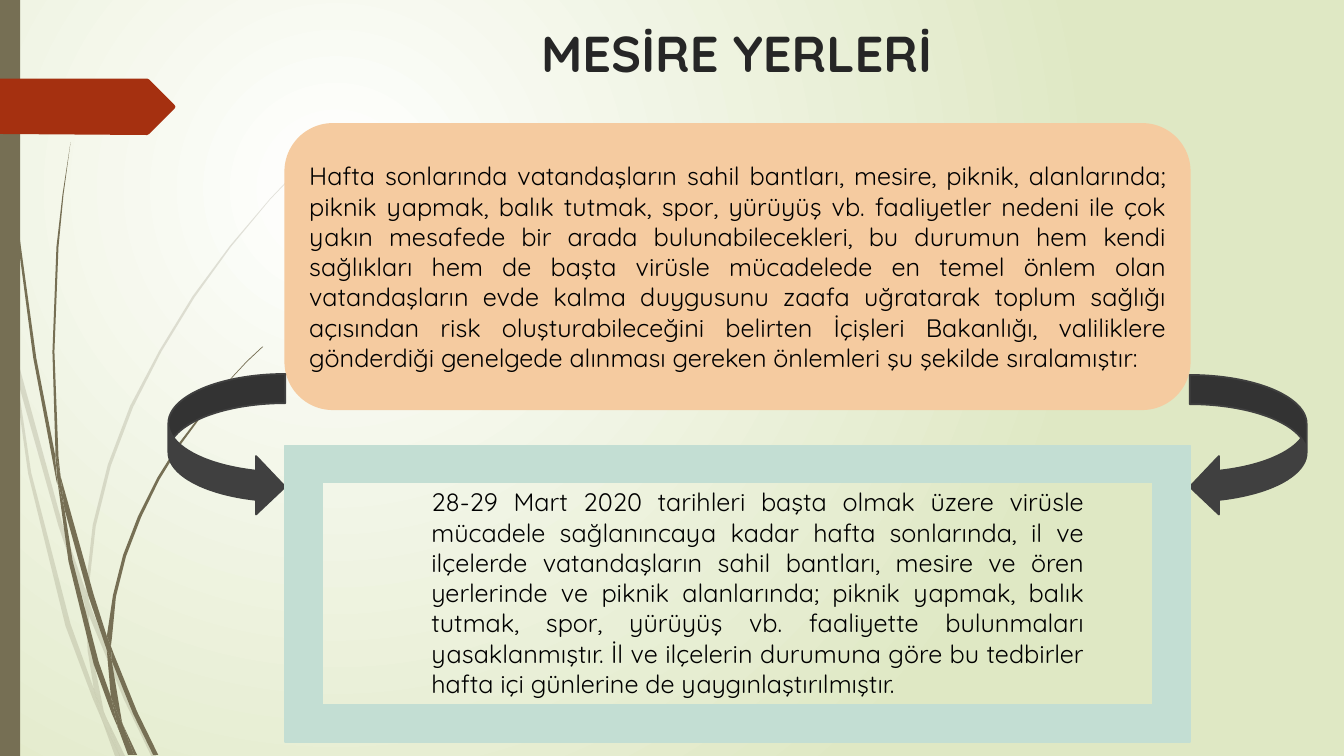
from lxml.etree import SubElement
from pptx import Presentation
from pptx.dml.color import RGBColor
from pptx.enum.shapes import MSO_SHAPE
from pptx.enum.text import MSO_ANCHOR, MSO_AUTO_SIZE, PP_ALIGN
from pptx.oxml.ns import qn
from pptx.util import Inches, Pt

COLORS = {
    "title": "262626", "text": "000000", "stem": "766F54", "badge": "A53010",
    "peach": "F5CBA0", "mint": "C3DED3", "arrow": "404040",
    "center": "FFFFFF", "edge": "DFE8C4",
}
FONT = "Quicksand"

# Outlines of the grass blades, as points in inches
PALE_BLADES = [
    [(0.11, 3.5), (0.09, 3.22), (0, 2.82), (0, 2.99), (0.1, 3.44)],
    [(0.58, 5.22), (0.84, 5.99), (0.85, 5.86), (0.62, 5.2), (0.14, 3.45), (0.17, 3.76)],
    [(0.92, 6.07), (0.88, 5.96), (0.88, 6.1), (1.23, 6.94), (1.5, 7.5), (1.55, 7.5),
     (1.27, 6.92)],
    [(1.19, 7.5), (1.24, 7.5), (1.05, 7.11)],
    [(0.93, 6.83), (0.7, 6.19), (0.31, 4.69), (0.17, 3.76), (0.11, 3.5), (0.28, 4.7),
     (0.65, 6.21), (0.92, 6.93), (1.01, 7.14), (0.99, 7.07)],
    [(0.84, 5.99), (0.87, 6.46), (0.93, 6.83), (0.96, 6.92), (1.05, 7.11), (1.03, 7.06),
     (0.91, 6.46), (0.88, 6.1), (0.88, 6.08)],
    [(0.88, 5.84), (0.95, 5.22), (1.1, 4.62), (1.32, 4.04), (1.6, 3.49), (1.93, 2.95),
     (2.29, 2.45), (2.68, 1.98), (2.9, 1.75), (3.12, 1.54), (3.12, 1.53), (2.89, 1.75),
     (2.68, 1.97), (2.28, 2.44), (1.91, 2.94), (1.58, 3.48), (1.29, 4.03), (1.07, 4.61),
     (0.92, 5.21), (0.85, 5.84), (0.85, 5.86), (0.88, 5.96)],
    [(1.01, 7.14), (1.14, 7.5), (1.19, 7.5)],
    [(0.88, 6.08), (0.88, 6.1), (0.88, 5.96), (0.85, 5.86), (0.84, 5.99)],
    [(0.96, 6.92), (0.93, 6.83), (0.99, 7.07), (1.01, 7.14), (1.19, 7.5), (1.05, 7.11)],
]
DARK_BLADES = [
    [(0.07, 1.1), (0.17, 2.33), (0.33, 3.55), (0.56, 4.77), (0.57, 4.81), (0.55, 4.57),
     (0.55, 4.53), (0.36, 3.55), (0.19, 2.32), (0.08, 1.09), (0.05, 0.48), (0.04, 0),
     (0.03, 0), (0.04, 0.48)],
    [(0.88, 5.92), (1.06, 6.45), (1.06, 6.33), (1.06, 6.31), (0.93, 5.9), (0.6, 4.72),
     (0.64, 5.05)],
    [(1.13, 6.49), (1.1, 6.41), (1.11, 6.56), (1.32, 7.08), (1.52, 7.49), (1.57, 7.49),
     (1.36, 7.06)],
    [(1.1, 6.91), (0.98, 6.57), (0.72, 5.56), (0.64, 5.05), (0.57, 4.77), (0.68, 5.57),
     (0.93, 6.59), (1.11, 7.08), (1.17, 7.22), (1.16, 7.17)],
    [(0.6, 4.72), (0.58, 4.53), (0.54, 3.49), (0.58, 2.45), (0.63, 1.93), (0.7, 1.41),
     (0.62, 1.93), (0.56, 2.45), (0.52, 3.49), (0.55, 4.49)],
    [(1.33, 7.49), (1.36, 7.49), (1.22, 7.19)],
    [(0.57, 4.77), (0.64, 5.05), (0.6, 4.72), (0.55, 4.49), (0.55, 4.53)],
    [(1.11, 6.33), (1.15, 5.92), (1.25, 5.52), (1.4, 5.13), (1.58, 4.76), (1.8, 4.4),
     (2.05, 4.06), (2.31, 3.74), (2.45, 3.59), (2.61, 3.44), (2.6, 3.44), (2.45, 3.58),
     (2.31, 3.73), (2.04, 4.05), (1.78, 4.39), (1.56, 4.74), (1.37, 5.12), (1.22, 5.51),
     (1.12, 5.91), (1.06, 6.31), (1.1, 6.41)],
    [(1.17, 7.22), (1.27, 7.49), (1.31, 7.49)],
    [(1.06, 6.45), (1.1, 6.91), (1.16, 7.06), (1.22, 7.19), (1.21, 7.16), (1.11, 6.56),
     (1.09, 6.51)],
    [(1.06, 6.45), (1.09, 6.51), (1.11, 6.56), (1.1, 6.41), (1.06, 6.31), (1.06, 6.33)],
    [(1.16, 7.06), (1.1, 6.91), (1.16, 7.17), (1.17, 7.22), (1.3, 7.49), (1.33, 7.49),
     (1.22, 7.19)],
]
BADGE = [(0, 0.78), (1.46, 0.78), (1.48, 0.79), (1.73, 1.04), (1.74, 1.06), (1.73, 1.08),
         (1.48, 1.33), (1.46, 1.34), (0, 1.33)]

MEASURES_INTRO = (
    "Hafta sonlarında vatandaşların sahil bantları, mesire, piknik, alanlarında; piknik "
    "yapmak, balık tutmak, spor, yürüyüş vb. faaliyetler nedeni ile çok yakın mesafede bir "
    "arada bulunabilecekleri, bu durumun hem kendi sağlıkları hem de başta virüsle "
    "mücadelede en temel önlem olan vatandaşların evde kalma duygusunu zaafa uğratarak "
    "toplum sağlığı açısından risk oluşturabileceğini belirten İçişleri Bakanlığı, "
    "valiliklere gönderdiği genelgede alınması gereken önlemleri şu şekilde sıralamıştır:"
)
PICNIC_BAN = (
    "28-29 Mart 2020 tarihleri başta olmak üzere virüsle mücadele sağlanıncaya kadar hafta "
    "sonlarında, il ve ilçelerde vatandaşların sahil bantları, mesire ve ören yerlerinde ve "
    "piknik alanlarında; piknik yapmak, balık tutmak, spor, yürüyüş vb. faaliyette "
    "bulunmaları yasaklanmıştır. İl ve ilçelerin durumuna göre bu tedbirler hafta içi "
    "günlerine de yaygınlaştırılmıştır."
)


def color(name):
    return RGBColor.from_string(COLORS[name])


def paint(shape, fill, outlined=False):
    shape.shadow.inherit = False
    shape.fill.solid()
    shape.fill.fore_color.rgb = color(fill)
    if outlined:
        shape.line.color.rgb = color(fill)
        shape.line.width = Pt(1.25)
    else:
        shape.line.fill.background()
    return shape


def add_preset(page, kind, left, top, width, height, fill, outlined=True):
    shape = page.shapes.add_shape(
        kind, Inches(left), Inches(top), Inches(width), Inches(height))
    return paint(shape, fill, outlined)


def add_outline(page, points, fill, opacity=100):
    corners = [(Inches(x), Inches(y)) for x, y in points]
    builder = page.shapes.build_freeform(*corners[0])
    builder.add_line_segments(corners[1:], close=True)
    shape = paint(builder.convert_to_shape(), fill)
    if opacity < 100:
        tint = shape.fill._xPr.find(".//" + qn("a:srgbClr"))
        SubElement(tint, qn("a:alpha")).set("val", str(opacity * 1000))


def write_text(shape, text, size=18, fill="text", bold=False, align=PP_ALIGN.JUSTIFY,
               anchor=MSO_ANCHOR.TOP, auto_size=MSO_AUTO_SIZE.NONE):
    frame = shape.text_frame
    frame.word_wrap = True
    frame.auto_size = auto_size
    frame.vertical_anchor = anchor
    para = frame.paragraphs[0]
    para.alignment = align
    span = para.add_run()
    span.text = text
    span.font.name = FONT
    span.font.size = Pt(size)
    span.font.bold = bold
    span.font.color.rgb = color(fill)


def set_background(page):
    fill = page.background.fill
    fill.gradient()
    for stop, name in zip(fill.gradient_stops, ("center", "edge")):
        stop.color.rgb = color(name)
    # Radial gradient centred a quarter of the way in
    linear = page._element.find(".//" + qn("a:lin"))
    gradient = linear.getparent()
    gradient.remove(linear)
    radial = SubElement(gradient, qn("a:path"))
    radial.set("path", "circle")
    focus = SubElement(radial, qn("a:fillToRect"))
    for side, share in zip("ltrb", (50, 50, 100, 100)):
        focus.set(side, str(share * 1000))


def add_decoration(page):
    for blade in PALE_BLADES:
        add_outline(page, blade, "stem", opacity=20)
    for blade in DARK_BLADES:
        add_outline(page, blade, "stem")
    add_preset(page, MSO_SHAPE.RECTANGLE, 0, 0, 0.2, 7.5, "stem", outlined=False)
    add_outline(page, BADGE, "badge")


def main():
    deck = Presentation()
    deck.slide_width, deck.slide_height = Inches(13.33), Inches(7.5)
    page = deck.slides.add_slide(deck.slide_layouts[5])
    set_background(page)
    add_decoration(page)

    # Title
    title = page.shapes.title
    title.left, title.top = Inches(2.43), Inches(0.17)
    title.width, title.height = Inches(9.75), Inches(1.4)
    write_text(title, "MESİRE YERLERİ", size=36, fill="title", bold=True,
               align=PP_ALIGN.CENTER)

    # Reason for the measures
    reason = add_preset(page, MSO_SHAPE.FLOWCHART_ALTERNATE_PROCESS,
                        2.83, 1.23, 8.97, 2.83, "peach")
    write_text(reason, MEASURES_INTRO, anchor=MSO_ANCHOR.MIDDLE)

    # Arrows from the reason to the ban
    add_preset(page, MSO_SHAPE.CURVED_RIGHT_ARROW, 1.67, 3.71, 1.16, 1.41, "arrow")
    add_preset(page, MSO_SHAPE.CURVED_LEFT_ARROW, 11.8, 3.72, 1.16, 1.4, "arrow")

    # Framed ban
    add_preset(page, MSO_SHAPE.FRAME, 2.83, 4.42, 8.97, 2.94, "mint")
    ban = page.shapes.add_textbox(Inches(4.18), Inches(4.78), Inches(6.67), Inches(2.22))
    write_text(ban, PICNIC_BAN, auto_size=MSO_AUTO_SIZE.SHAPE_TO_FIT_TEXT)

    deck.save("out.pptx")


if __name__ == "__main__":
    main()
